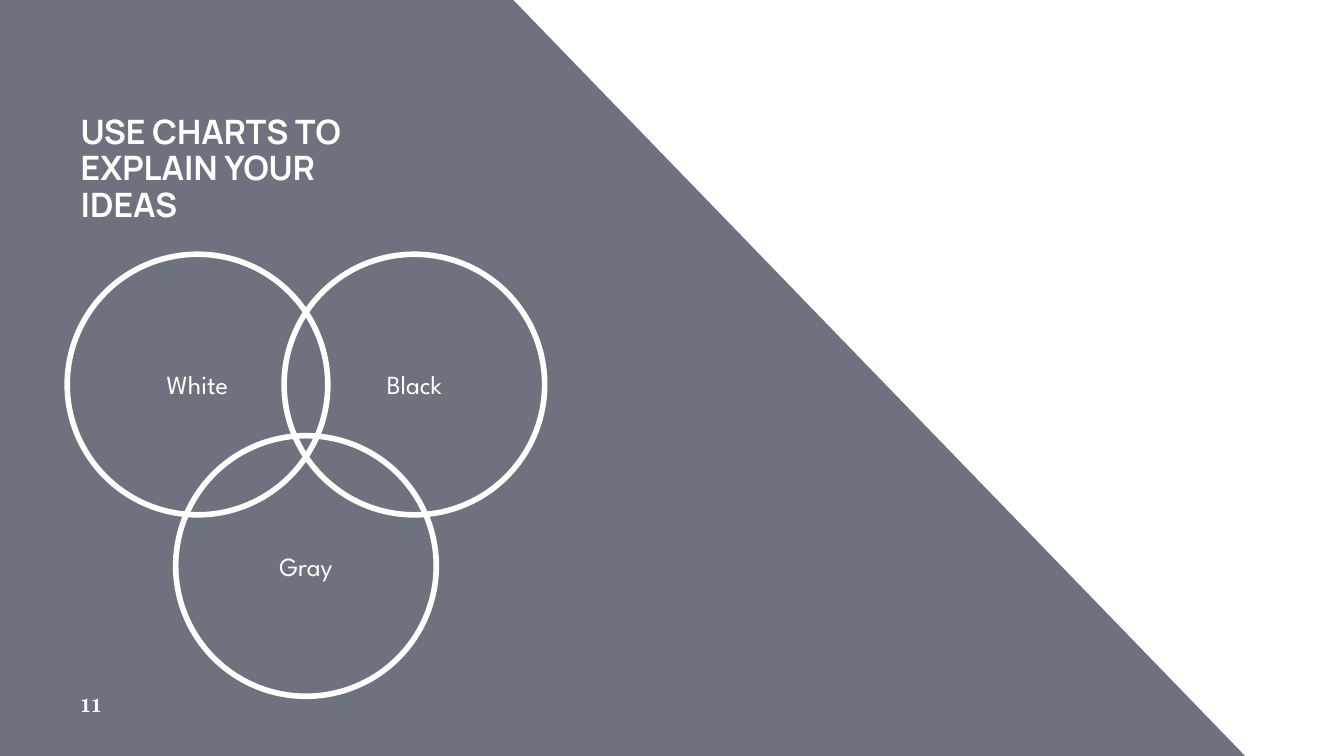
from dataclasses import dataclass

from lxml import etree
from pptx import Presentation
from pptx.dml.color import RGBColor
from pptx.enum.shapes import MSO_SHAPE
from pptx.enum.text import MSO_ANCHOR, MSO_AUTO_SIZE, PP_ALIGN
from pptx.oxml.ns import qn
from pptx.util import Pt

OVAL = MSO_SHAPE.OVAL
MIDDLE, BOTTOM = MSO_ANCHOR.MIDDLE, MSO_ANCHOR.BOTTOM
LEFT, CENTER = PP_ALIGN.LEFT, PP_ALIGN.CENTER
NO_AUTOFIT = MSO_AUTO_SIZE.NONE
TITLE_ONLY = 5


@dataclass(frozen=True)
class Theme:
    white: RGBColor = RGBColor(0xFF, 0xFF, 0xFF)
    navy: RGBColor = RGBColor(0x21, 0x25, 0x39)
    title_font: str = "Manrope"
    label_font: str = "League Spartan"
    number_font: str = "TeX Gyre Schola"
    title_size: int = 18
    label_size: int = 14
    number_size: int = 10


THEME = Theme()


def write_text(shape, text, font, size, bold=False, align=LEFT, anchor=MIDDLE):
    frame = shape.text_frame
    frame.text = text
    frame.word_wrap = True
    frame.auto_size = NO_AUTOFIT
    frame.vertical_anchor = anchor
    frame.margin_left = frame.margin_right = Pt(7.2)
    frame.margin_top = frame.margin_bottom = Pt(7.2)
    para = frame.paragraphs[0]
    para.alignment = align
    for span in para.runs:
        span.font.name = font
        span.font.size = Pt(size)
        span.font.bold = bold
        span.font.color.rgb = THEME.white


def add_backdrop(page, points, opacity):
    builder = page.shapes.build_freeform(Pt(points[0][0]), Pt(points[0][1]))
    builder.add_line_segments([(Pt(x), Pt(y)) for x, y in points[1:]])
    backdrop = builder.convert_to_shape()
    backdrop.shadow.inherit = False
    backdrop.line.fill.background()
    backdrop.fill.solid()
    backdrop.fill.fore_color.rgb = THEME.navy
    color = backdrop.element.spPr.find(qn("a:solidFill")).find(qn("a:srgbClr"))
    etree.SubElement(color, qn("a:alpha"), val=str(opacity * 1000))
    page.shapes.title.element.addprevious(backdrop.element)


def set_title(page, text, left, top, width, height):
    title = page.shapes.title
    title.left, title.top = Pt(left), Pt(top)
    title.width, title.height = Pt(width), Pt(height)
    write_text(title, text, THEME.title_font, THEME.title_size, bold=True, anchor=BOTTOM)
    title.text_frame.paragraphs[0].line_spacing = 0.9


def add_ring(page, label, left, top, diameter):
    ring = page.shapes.add_shape(OVAL, Pt(left), Pt(top), Pt(diameter), Pt(diameter))
    ring.shadow.inherit = False
    ring.fill.background()
    ring.line.color.rgb = THEME.white
    ring.line.width = Pt(3)
    write_text(ring, label, THEME.label_font, THEME.label_size, align=CENTER)


def add_venn(page, left, top, diameter, step, drop):
    add_ring(page, "Gray", left + step / 2, top + drop, diameter)
    for column, label in enumerate(("White", "Black")):
        add_ring(page, label, left + column * step, top, diameter)


def add_page_number(page, number, left, top, width, height):
    box = page.shapes.add_textbox(Pt(left), Pt(top), Pt(width), Pt(height))
    write_text(box, number, THEME.number_font, THEME.number_size, bold=True)


def main():
    deck = Presentation()
    deck.slide_width, deck.slide_height = Pt(720), Pt(405)
    page = deck.slides.add_slide(deck.slide_layouts[TITLE_ONLY])
    page.background.fill.solid()
    page.background.fill.fore_color.rgb = THEME.white
    add_backdrop(page, [(274.3, -0.7), (0, 0), (0, 405.4), (667.4, 405.4)], opacity=65)
    set_title(page, "USE CHARTS TO EXPLAIN YOUR IDEAS", 36, 77.8, 188, 49.7)
    add_venn(page, left=36, top=136.2, diameter=139.6, step=116.2, drop=97.2)
    add_page_number(page, "11", 36, 368, 43.2, 19.4)
    deck.save("out.pptx")


if __name__ == "__main__":
    main()
